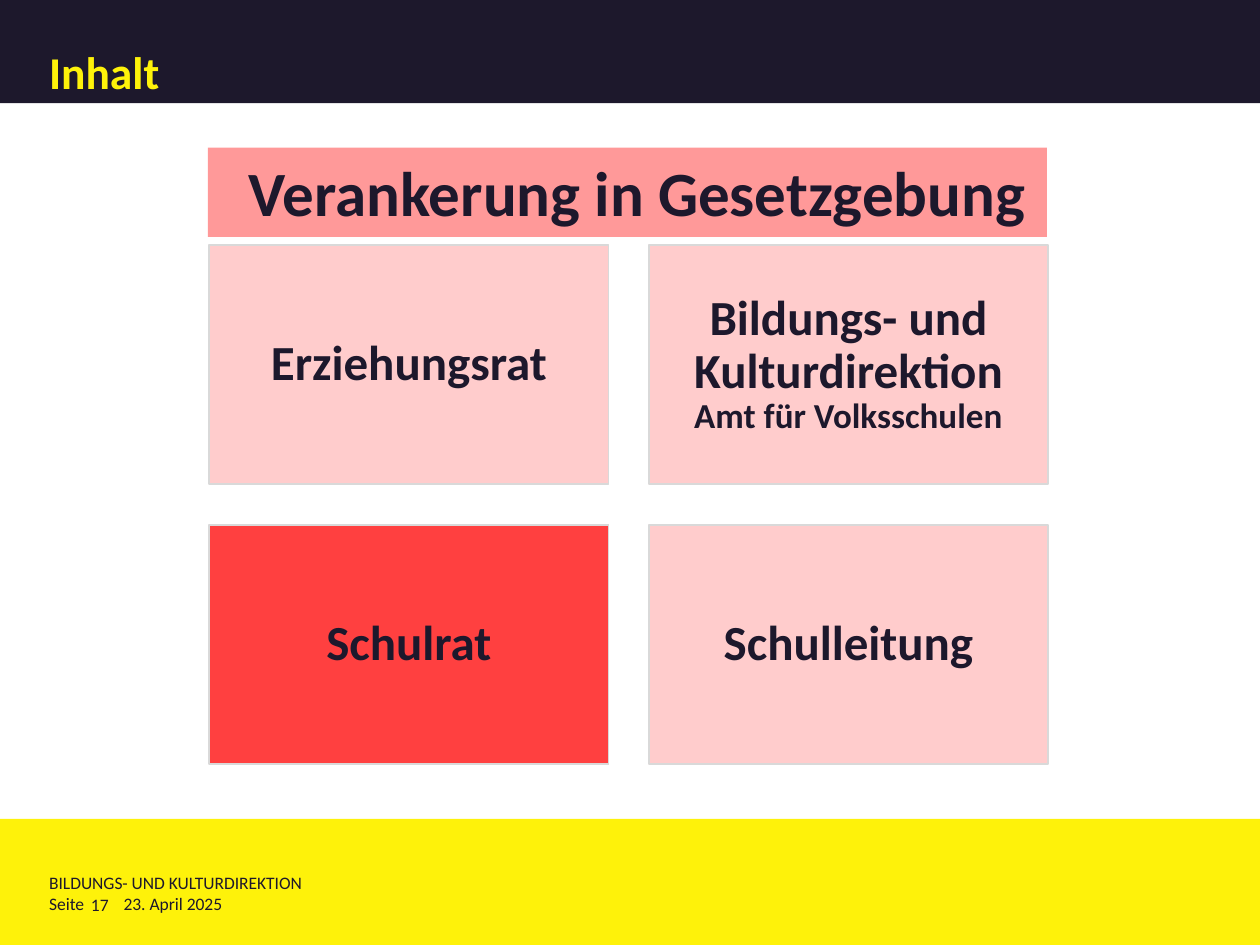
from pptx import Presentation
from pptx.dml.color import RGBColor
from pptx.enum.shapes import MSO_SHAPE as Shape
from pptx.enum.text import MSO_ANCHOR as Anchor, PP_ALIGN as Align
from pptx.util import Pt

DARK = RGBColor(0x1D, 0x18, 0x2C)
YELLOW = RGBColor(0xFE, 0xF2, 0x0A)
PINK = RGBColor(0xFF, 0xCC, 0xCC)
ROSE = RGBColor(0xFF, 0x99, 0x99)
RED = RGBColor(0xFF, 0x40, 0x40)
GREY = RGBColor(0xD9, 0xD9, 0xD9)

WIDTH, HEIGHT = 720, 540
LEFT, TOP = 119.5, 139.8
CARD_W, CARD_H = 228.3, 137
STEP_X, STEP_Y = 251.2, 160

CARDS = [
    [("Erziehungsrat", 28)],
    [("Bildungs- und Kulturdirektion", 28), ("Amt für Volksschulen", 20)],
    [("Schulrat", 28)],
    [("Schulleitung", 28)],
]
FOOTER = [
    ("BILDUNGS- UND KULTURDIREKTION", 28.1, 498.2, 538),
    ("Seite", 28.1, 510.5, 25),
    ("17", 52, 510.8, 21),
    ("23. April 2025", 70.6, 510.5, 164),
]


def write(shape, lines, color=DARK, bold=True, align=Align.LEFT,
          anchor=Anchor.TOP, spacing=1.0, inset=(0, 0, 0, 0)):
    """Fill a shape with one paragraph of (text, size) lines."""
    frame = shape.text_frame
    frame.word_wrap = True
    frame.vertical_anchor = anchor
    (frame.margin_left, frame.margin_top,
     frame.margin_right, frame.margin_bottom) = map(Pt, inset)
    para = frame.paragraphs[0]
    para.alignment = align
    para.line_spacing = spacing
    for i, (text, size) in enumerate(lines):
        if i:
            para.add_line_break()
        run = para.add_run()
        run.text = text
        font = run.font
        font.name = "Calibri"
        font.size = Pt(size)
        font.bold = bold
        font.color.rgb = color


def block(slide, x, y, w, h, fill, line=None):
    rect = slide.shapes.add_shape(Shape.RECTANGLE, Pt(x), Pt(y), Pt(w), Pt(h))
    rect.shadow.inherit = False
    rect.fill.solid()
    rect.fill.fore_color.rgb = fill
    if line is None:
        rect.line.fill.background()
    else:
        rect.line.color.rgb = line
        rect.line.width = Pt(1)
    return rect


def footer(slide):
    block(slide, 0, 468, WIDTH, 72, YELLOW)
    for text, x, y, w in FOOTER:
        box = slide.shapes.add_textbox(Pt(x), Pt(y), Pt(w), Pt(12.2))
        write(box, [(text, 10)], bold=False)


def grid(slide):
    for i, lines in enumerate(CARDS):
        row, col = divmod(i, 2)
        fill = RED if lines[0][0] == "Schulrat" else PINK
        card = block(slide, LEFT + col * STEP_X, TOP + row * STEP_Y,
                     CARD_W, CARD_H, fill, GREY)
        write(card, lines, align=Align.CENTER, anchor=Anchor.MIDDLE,
              spacing=0.9, inset=(8.4, 8.4, 8.4, 8.4))


def main():
    deck = Presentation()
    deck.slide_width, deck.slide_height = Pt(WIDTH), Pt(HEIGHT)
    slide = deck.slides.add_slide(deck.slide_layouts[6])
    footer(slide)
    title = block(slide, 0, 0, WIDTH, 59, DARK)
    write(title, [("Inhalt", 26)], color=YELLOW, anchor=Anchor.BOTTOM,
          spacing=0.8, inset=(28.1, 5.8, 5.8, 2.9))
    grid(slide)
    banner = block(slide, 118.8, 84.4, 479.5, 51, ROSE)
    write(banner, [("Verankerung in Gesetzgebung", 36)],
          inset=(23.5, 3.6, 7.2, 3.6))
    deck.save("out.pptx")


if __name__ == "__main__":
    main()
